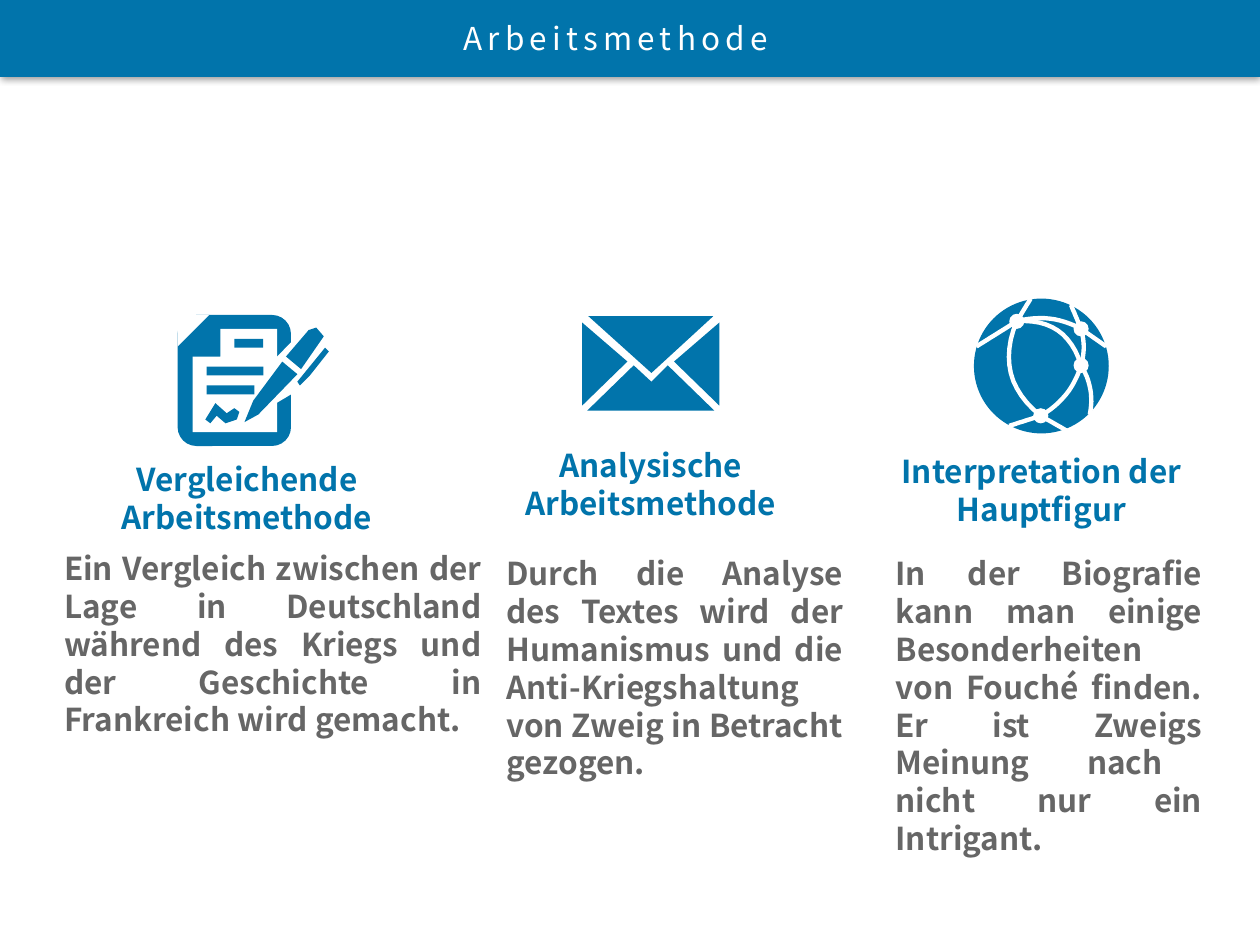
import dataclasses

import lxml.etree
import pptx
import pptx.dml.color
import pptx.enum.shapes
import pptx.enum.text
import pptx.oxml.ns
import pptx.util

Inches = pptx.util.Inches
Pt = pptx.util.Pt
Align = pptx.enum.text.PP_ALIGN
Preset = pptx.enum.shapes.MSO_SHAPE
qn = pptx.oxml.ns.qn


@dataclasses.dataclass(frozen=True)
class Theme:
    blue: str = "0174AB"
    grey: str = "666666"
    white: str = "FFFFFF"
    font: str = "Noto Sans CJK SC"
    size: float = 18
    leading: float = 21.6


THEME = Theme()
TAB_STOP = Inches(1.52)


def rgb(color):
    return pptx.dml.color.RGBColor.from_string(color)


def paint(shape, color):
    shape.shadow.inherit = False
    shape.fill.solid()
    shape.fill.fore_color.rgb = rgb(color)
    shape.line.fill.background()


def add_text(slide, box, paragraphs, color, align, bold=True, tracking=0):
    frame = slide.shapes.add_textbox(*map(Inches, box)).text_frame
    frame.word_wrap = True
    for index, text in enumerate(paragraphs):
        paragraph = frame.paragraphs[0] if index == 0 else frame.add_paragraph()
        paragraph.alignment = align
        paragraph.line_spacing = Pt(THEME.leading)
        if "\t" in text:
            tabs = lxml.etree.SubElement(paragraph._p.get_or_add_pPr(), qn("a:tabLst"))
            lxml.etree.SubElement(tabs, qn("a:tab"), pos=str(TAB_STOP), algn="l")
        run = paragraph.add_run()
        run.text = text
        run.font.name = THEME.font
        run.font.size = Pt(THEME.size)
        run.font.bold = bold
        run.font.color.rgb = rgb(color)
        if tracking:
            run._r.get_or_add_rPr().set("spc", str(tracking * 100))


class Icon:
    """A group drawn in hundredths of an inch from its top left corner."""

    def __init__(self, slide, corner):
        self.shapes = slide.shapes.add_group_shape().shapes
        self.left, self.top = corner

    def outline(self, points, close=True):
        start, *rest = [(x * 10, y * 10) for x, y in points]
        builder = self.shapes.build_freeform(*start, scale=Inches(1) / 1000)
        builder.add_line_segments(rest, close=close)
        return builder.convert_to_shape(Inches(self.left), Inches(self.top))

    def polygon(self, points, color=THEME.blue):
        paint(self.outline(points), color)

    def preset(self, kind, x, y, width, height, color=THEME.blue):
        paint(self.shapes.add_shape(
            kind, Inches(self.left + x / 100), Inches(self.top + y / 100),
            Inches(width / 100), Inches(height / 100)), color)

    def arc(self, start, end, bend=0, steps=12):
        (x0, y0), (x1, y1) = start, end
        bulge_x, bulge_y = -bend * (y1 - y0), bend * (x1 - x0)
        points = []
        for step in range(steps + 1):
            t = step / steps
            lift = 2 * t * (1 - t)
            points.append((x0 + t * (x1 - x0) + lift * bulge_x,
                           y0 + t * (y1 - y0) + lift * bulge_y))
        curve = self.outline(points, close=False)
        curve.shadow.inherit = False
        curve.fill.background()
        curve.line.color.rgb = rgb(THEME.white)
        curve.line.width = Pt(2.5)


def add_paper_and_pen(slide, corner):
    icon = Icon(slide, corner)
    # page with a folded corner
    icon.preset(Preset.ROUNDED_RECTANGLE, 0, 0, 90, 104)
    icon.polygon([(0, 0), (25, 0), (0, 25)], THEME.white)
    icon.polygon([(34, 11), (79, 11), (79, 93), (12, 93), (12, 33), (34, 33)],
                 THEME.white)
    # writing and signature
    for x, y, width in ((45, 19, 23), (23, 41, 45), (23, 56, 38)):
        icon.preset(Preset.RECTANGLE, x, y, width, 7)
    icon.polygon([(22, 83), (30, 70), (39, 78), (45, 74), (49, 77), (47, 83),
                  (38, 86), (31, 80), (26, 86)])
    # pen on a white rim: nib, barrel, clip
    icon.polygon([(48, 88), (79, 33), (108, 3), (122, 20), (90, 63)], THEME.white)
    icon.polygon([(53, 85), (60, 68), (83, 37), (95, 47), (64, 79)])
    icon.polygon([(86, 33), (104, 12), (110, 10), (116, 17), (98, 43)])
    icon.polygon([(95, 53), (117, 26), (120, 29), (105, 48), (97, 56)])


def add_envelope(slide, corner):
    icon = Icon(slide, corner)
    width, height, middle = 109, 75, 55
    icon.polygon([(5, 0), (width - 5, 0), (middle, 45)])
    icon.polygon([(4, height), (41, 39), (middle, 52), (width - 41, 39),
                  (width - 4, height)])
    for edge, inner in ((0, 36), (width, width - 36)):
        icon.polygon([(edge, 5), (inner, 36), (edge, 71)])


def add_globe(slide, corner):
    icon = Icon(slide, corner)
    icon.preset(Preset.OVAL, 0, 0, 107, 107)
    west, north, east, south = nodes = [(34, 18), (85, 24), (85, 53), (53, 93)]
    # arcs between the nodes
    for start, end, bend in ((west, south, 0.38), (west, east, -0.4),
                             (east, south, -0.2), (west, north, -0.2),
                             (north, east, -0.15)):
        icon.arc(start, end, bend)
    # arcs out to the rim
    for start, rim in ((west, (45, 0)), (west, (2, 38)), (north, (77, 5)),
                       (north, (105, 38)), (south, (28, 101)), (south, (74, 105))):
        icon.arc(start, rim)
    icon.arc(east, (92, 92), -0.2)
    for x, y in nodes:
        icon.preset(Preset.OVAL, x - 6, y - 6, 12, 12, THEME.white)


def add_header(slide, box):
    left, top, width, height = box
    bar = slide.shapes.add_shape(Preset.RECTANGLE, *map(Inches, box))
    paint(bar, THEME.blue)
    effects = bar._element.spPr.find(qn("a:effectLst"))
    shadow = lxml.etree.SubElement(effects, qn("a:outerShdw"), blurRad=str(Pt(4)),
                                   dist=str(Pt(1)), dir="5400000", rotWithShape="0")
    black = lxml.etree.SubElement(shadow, qn("a:srgbClr"), val="000000")
    lxml.etree.SubElement(black, qn("a:alpha"), val="40000")
    add_text(slide, (left + 3.58, top + 0.1, 4.78, 0.4), ["Arbeitsmethode"],
             THEME.white, Align.LEFT, bold=False, tracking=3)


def add_method(slide, add_icon, corner, heading, heading_box, paragraphs, body_box):
    add_icon(slide, corner)
    add_text(slide, heading_box, [heading], THEME.blue, Align.CENTER)
    add_text(slide, body_box, paragraphs, THEME.grey, Align.JUSTIFY)


# Per method: icon, its corner, heading, its box, paragraphs, their box
METHODS = [
    (add_paper_and_pen, (1.41, 2.5),
     "Vergleichende Arbeitsmethode", (0, 3.6, 3.92, 0.71),
     ["Ein Vergleich zwischen der Lage in Deutschland während des Kriegs und "
      "der Geschichte in Frankreich wird gemacht."], (0.41, 4.31, 3.51, 1.62)),
    (add_envelope, (4.62, 2.51),
     "Analysische Arbeitsmethode", (3.73, 3.49, 2.87, 0.71),
     ["Durch die Analyse des Textes wird der Humanismus und die "
      "Anti-Kriegshaltung von Zweig in Betracht gezogen."], (3.92, 4.35, 2.87, 1.92)),
    (add_globe, (7.73, 2.37),
     "Interpretation der Hauptfigur", (7.01, 3.54, 2.51, 0.71),
     ["In der Biografie kann man einige Besonderheiten von Fouché finden. "
      "Er ist Zweigs Meinung\tnach", "nicht nur ein Intrigant."],
     (7.01, 4.35, 2.63, 2.52)),
]


def main():
    deck = pptx.Presentation()
    deck.slide_width, deck.slide_height = Inches(10), Inches(7.5)
    slide = deck.slides.add_slide(deck.slide_layouts[6])
    add_header(slide, (0, 0, 10, 0.61))
    for method in METHODS:
        add_method(slide, *method)
    deck.save("out.pptx")


if __name__ == "__main__":
    main()
